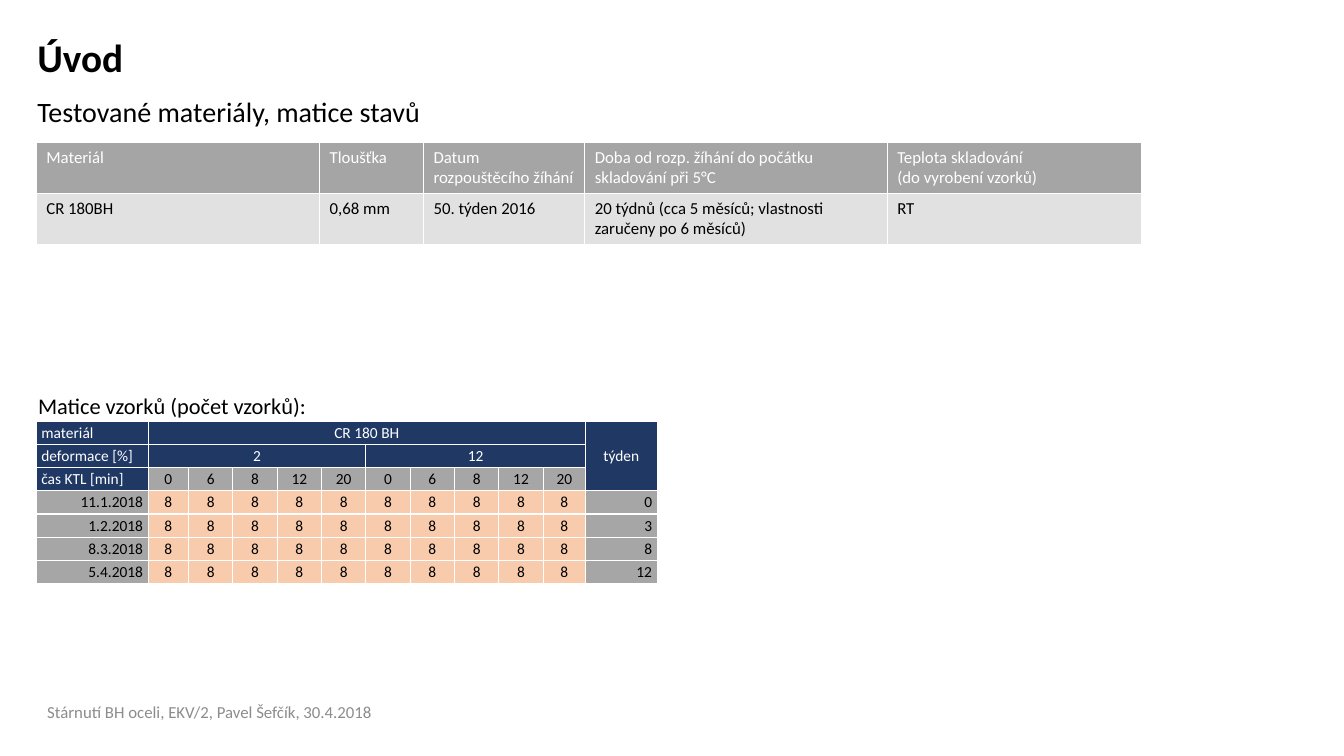
import lxml.etree
import pptx
import pptx.dml.color
import pptx.enum.text
import pptx.oxml.ns
import pptx.util

ALIGN = pptx.enum.text.PP_ALIGN
ANCHOR = pptx.enum.text.MSO_ANCHOR
AUTO_SIZE = pptx.enum.text.MSO_AUTO_SIZE
COLORS = {
    "black": "000000",
    "white": "FFFFFF",
    "footer": "8C8C8C",
    "header": "A5A5A5",
    "row": "E1E1E1",
    "navy": "203864",
    "gray": "A6A6A6",
    "peach": "F8CBAD",
}


class SlideBuilder:
    """Holds the slide and its style, and adds each kind of element."""

    font = "Calibri"

    def __init__(self, slide):
        self.slide = slide

    @staticmethod
    def px(length):
        return pptx.util.Emu(length * 9144)

    @staticmethod
    def rgb(name):
        return pptx.dml.color.RGBColor.from_string(COLORS[name])

    def format_text(self, text_frame, size, color="black", bold=False, align=ALIGN.LEFT):
        for paragraph in text_frame.paragraphs:
            paragraph.alignment = align
            for run in paragraph.runs:
                run.font.name = self.font
                run.font.size = pptx.util.Pt(size)
                run.font.bold = bold
                run.font.color.rgb = self.rgb(color)

    def place(self, shape, box):
        shape.left, shape.top, shape.width, shape.height = map(self.px, box)

    def placeholder(self, index, box, text, size, line_spacing, bold=False):
        shape = self.slide.placeholders[index]
        self.place(shape, box)
        text_frame = shape.text_frame
        text_frame.text = text
        text_frame.auto_size = AUTO_SIZE.NONE
        text_frame.vertical_anchor = ANCHOR.TOP
        text_frame.margin_left = text_frame.margin_right = 0
        text_frame.margin_top = text_frame.margin_bottom = 0
        self.format_text(text_frame, size, bold=bold)
        paragraph = text_frame.paragraphs[0]
        paragraph.line_spacing = pptx.util.Pt(line_spacing)
        paragraph.space_before = pptx.util.Pt(0)
        properties = paragraph._p.get_or_add_pPr()
        properties.set("marL", "0")
        properties.set("indent", "0")
        lxml.etree.SubElement(properties, pptx.oxml.ns.qn("a:buNone"))

    def text_box(self, box, text, size, color="black", wrap=True, anchor=ANCHOR.TOP):
        shape = self.slide.shapes.add_textbox(*map(self.px, box))
        text_frame = shape.text_frame
        text_frame.text = text
        text_frame.word_wrap = wrap
        text_frame.vertical_anchor = anchor
        self.format_text(text_frame, size, color)

    def table(self, left, top, widths, row_height, row_count):
        box = (left, top, sum(widths), row_height * row_count)
        frame = self.slide.shapes.add_table(row_count, len(widths), *map(self.px, box))
        for column, width in zip(frame.table.columns, widths):
            column.width = self.px(width)
        return frame.table

    def cell(self, cell, text, size, fill, color="black", align=ALIGN.LEFT,
             anchor=ANCHOR.TOP, margins=(10, 5)):
        cell.text_frame.text = text
        self.format_text(cell.text_frame, size, color, align=align)
        cell.vertical_anchor = anchor
        cell.margin_left = cell.margin_right = self.px(margins[0])
        cell.margin_top = cell.margin_bottom = self.px(margins[1])
        properties = cell._tc.get_or_add_tcPr()
        for side in ("lnL", "lnR", "lnT", "lnB"):
            line = lxml.etree.SubElement(properties, pptx.oxml.ns.qn(f"a:{side}"), w="12700")
            solid = lxml.etree.SubElement(line, pptx.oxml.ns.qn("a:solidFill"))
            lxml.etree.SubElement(solid, pptx.oxml.ns.qn("a:srgbClr"), val=COLORS["white"])
        cell.fill.solid()
        cell.fill.fore_color.rgb = self.rgb(fill)

    def material_table(self):
        rows = [
            ["Materiál", "Tloušťka", "Datum rozpouštěcího žíhání",
             "Doba od rozp. žíhání do počátku skladování při 5°C",
             "Teplota skladování\n(do vyrobení vzorků)"],
            ["CR 180BH", "0,68 mm", "50. týden 2016",
             "20 týdnů (cca 5 měsíců; vlastnosti zaručeny po 6 měsíců)", "RT"],
        ]
        table = self.table(36, 141, [281, 103, 160, 300, 252], 50, len(rows))
        styles = [("header", "white"), ("row", "black")]
        for row, (texts, (fill, color)) in enumerate(zip(rows, styles)):
            for column, text in enumerate(texts):
                self.cell(table.cell(row, column), text, 12, fill, color)

    def sample_matrix(self):
        times = ["0", "6", "8", "12", "20"]
        weeks = {"11.1.2018": "0", "1.2.2018": "3", "8.3.2018": "8", "5.4.2018": "12"}
        rows = [
            ["materiál", "CR 180 BH"] + [""] * 9 + ["týden"],
            ["deformace [%]", "2"] + [""] * 4 + ["12"] + [""] * 5,
            ["čas KTL [min]"] + times * 2 + [""],
        ]
        rows += [[date] + ["8"] * 10 + [week] for date, week in weeks.items()]
        widths = [111, 40] + [44] * 8 + [42, 71]
        last = len(widths) - 1
        table = self.table(36, 418, widths, 23, len(rows))
        for row, texts in enumerate(rows):
            for column, text in enumerate(texts):
                edge = column in (0, last)
                header = row < 2 or (row == 2 and edge)
                if header:
                    fill, color = "navy", "white"
                else:
                    fill, color = "gray" if edge or row == 2 else "peach", "black"
                if row > 2 and edge:
                    align = ALIGN.RIGHT
                else:
                    align = ALIGN.LEFT if column == 0 else ALIGN.CENTER
                anchor = ANCHOR.MIDDLE if header and column == last else ANCHOR.BOTTOM
                self.cell(table.cell(row, column), text, 11, fill, color, align, anchor, (5, 2))
        for start, end in [((0, 1), (0, 10)), ((1, 1), (1, 5)), ((1, 6), (1, 10)),
                           ((0, last), (2, last))]:
            table.cell(*start).merge(table.cell(*end))


def main():
    presentation = pptx.Presentation()
    presentation.slide_width = SlideBuilder.px(1333)
    presentation.slide_height = SlideBuilder.px(750)
    builder = SlideBuilder(presentation.slides.add_slide(presentation.slide_layouts[1]))
    builder.placeholder(0, (37, 35, 1094, 47), "Úvod", 28, 32, bold=True)
    builder.placeholder(1, (37, 94, 1094, 39), "Testované materiály, matice stavů", 20, 24)
    builder.material_table()
    builder.sample_matrix()
    builder.text_box((28, 384, 314, 37), "Matice vzorků (počet vzorků):", 16, wrap=False)
    builder.text_box((37, 696, 675, 20), "Stárnutí BH oceli, EKV/2, Pavel Šefčík, 30.4.2018",
                     12, "footer", anchor=ANCHOR.MIDDLE)
    presentation.save("out.pptx")


if __name__ == "__main__":
    main()
